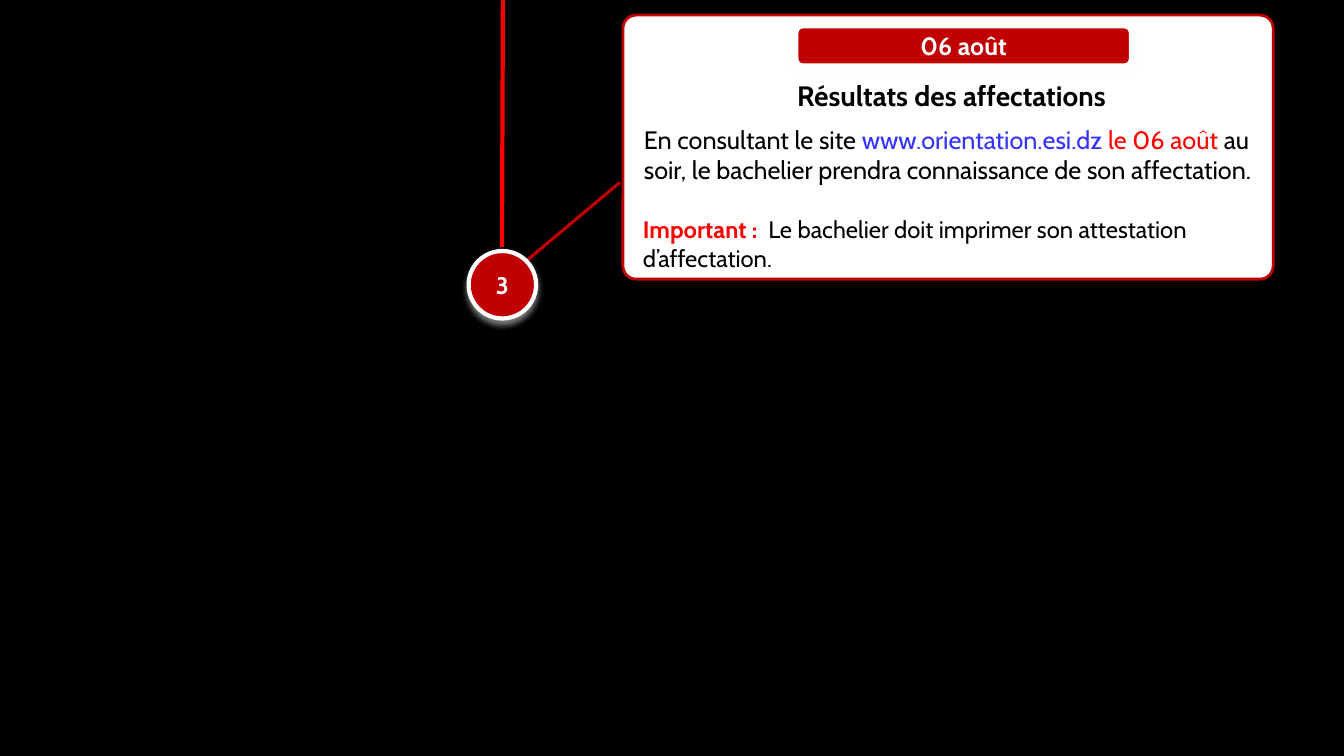
from dataclasses import dataclass

from lxml import etree
from pptx import Presentation
from pptx import util as u
from pptx.dml.color import RGBColor
from pptx.enum import shapes, text
from pptx.oxml import ns

COLOURS = {
    "black": "000000",
    "white": "FFFFFF",
    "red": "FF0000",
    "crimson": "C00000",
    "blue": "3333FF",
    "glow": "FFFFFF",
}
FONT = "Cabin"
WIDTH, HEIGHT = u.Inches(13.33), u.Inches(7.5)


@dataclass(frozen=True)
class Area:
    """Left, top, width and height in percent of the slide."""
    left: float
    top: float
    width: float
    height: float

    def lengths(self) -> tuple:
        return (across(self.left), down(self.top), across(self.width), down(self.height))


@dataclass(frozen=True)
class Panel:
    kind: shapes.MSO_SHAPE
    area: Area
    fill: str
    outline: str
    weight: float
    corner: float | None = None
    label: str = ""
    size: float = 18
    glow: bool = False


@dataclass(frozen=True)
class Link:
    start: tuple[float, float]
    end: tuple[float, float]
    colour: str
    weight: float


@dataclass(frozen=True)
class Run:
    wording: str
    colour: str = "black"
    bold: bool = False


@dataclass(frozen=True)
class Note:
    area: Area
    runs: tuple[Run, ...]
    size: float
    centred: bool = False


LINKS = (
    Link((37.42, 0), (37.35, 32.67), "red", 3),
    Link((39.15, 34.53), (46.12, 24.13), "crimson", 2.25),
)
PANELS = (
    Panel(shapes.MSO_SHAPE.ROUNDED_RECTANGLE, Area(46.35, 2, 48.38, 34.93),
          "white", "crimson", 2, corner=0.05),
    Panel(shapes.MSO_SHAPE.ROUNDED_RECTANGLE, Area(59.25, 3.47, 24.9, 5.2),
          "crimson", "white", 3, label="06 août", size=17.9, glow=True),
    Panel(shapes.MSO_SHAPE.OVAL, Area(34.87, 33.2, 5.02, 8.93),
          "crimson", "white", 3, label="3", size=17.1, glow=True),
)
NOTES = (
    Note(Area(46.72, 9.73, 48.15, 5.87),
         (Run("Résultats des affectations", bold=True),), 20, centred=True),
    Note(Area(47.17, 15.73, 47.85, 13.73), (
        Run("En consultant le site "),
        Run("www.orientation.esi.dz ", "blue"),
        Run("le 06 août ", "red"),
        Run("au soir, le bachelier prendra connaissance de son affectation."),
    ), 18),
    Note(Area(47.1, 27.73, 47.47, 9.2), (
        Run("Important : ", "red", bold=True),
        Run(" Le bachelier doit imprimer son attestation d’affectation."),
    ), 17),
)


def across(percent: float) -> int:
    return round(WIDTH * percent / 100)


def down(percent: float) -> int:
    return round(HEIGHT * percent / 100)


def rgb(name: str) -> RGBColor:
    return RGBColor.from_string(COLOURS[name])


def write(paragraph, wording: str, *, size: float, colour: str, bold: bool = False) -> None:
    run = paragraph.add_run()
    run.text = wording
    run.font.name = FONT
    run.font.size = u.Pt(size)
    run.font.bold = bold
    run.font.color.rgb = rgb(colour)


def add_glow(shape) -> None:
    effects = shape._element.spPr.find(ns.qn("a:effectLst"))
    shadow = etree.SubElement(effects, ns.qn("a:outerShdw"), blurRad=str(u.Pt(4.5)),
                              dist=str(u.Pt(3)), dir="5400000", rotWithShape="0")
    colour = etree.SubElement(shadow, ns.qn("a:srgbClr"), val=COLOURS["glow"])
    etree.SubElement(colour, ns.qn("a:alpha"), val="48000")


def draw_link(slide, link: Link) -> None:
    connector = slide.shapes.add_connector(
        shapes.MSO_CONNECTOR.STRAIGHT,
        across(link.start[0]), down(link.start[1]), across(link.end[0]), down(link.end[1]))
    connector.line.color.rgb = rgb(link.colour)
    connector.line.width = u.Pt(link.weight)
    etree.SubElement(connector._element.spPr, ns.qn("a:effectLst"))


def draw_panel(slide, panel: Panel) -> None:
    shape = slide.shapes.add_shape(panel.kind, *panel.area.lengths())
    shape.shadow.inherit = False
    shape.fill.solid()
    shape.fill.fore_color.rgb = rgb(panel.fill)
    shape.line.color.rgb = rgb(panel.outline)
    shape.line.width = u.Pt(panel.weight)
    if panel.corner is not None:
        shape.adjustments[0] = panel.corner
    if panel.glow:
        add_glow(shape)
    if panel.label:
        frame = shape.text_frame
        frame.vertical_anchor = text.MSO_ANCHOR.MIDDLE
        paragraph = frame.paragraphs[0]
        paragraph.alignment = text.PP_ALIGN.CENTER
        write(paragraph, panel.label, size=panel.size, colour="white", bold=True)


def draw_note(slide, note: Note) -> None:
    frame = slide.shapes.add_textbox(*note.area.lengths()).text_frame
    frame.word_wrap = True
    paragraph = frame.paragraphs[0]
    paragraph.alignment = text.PP_ALIGN.CENTER if note.centred else text.PP_ALIGN.LEFT
    for run in note.runs:
        write(paragraph, run.wording, size=note.size, colour=run.colour, bold=run.bold)


def main() -> None:
    presentation = Presentation()
    presentation.slide_width, presentation.slide_height = WIDTH, HEIGHT
    slide = presentation.slides.add_slide(presentation.slide_layouts[6])
    slide.background.fill.solid()
    slide.background.fill.fore_color.rgb = rgb("black")
    for link in LINKS:
        draw_link(slide, link)
    for panel in PANELS:
        draw_panel(slide, panel)
    for note in NOTES:
        draw_note(slide, note)
    presentation.save("out.pptx")


if __name__ == "__main__":
    main()
